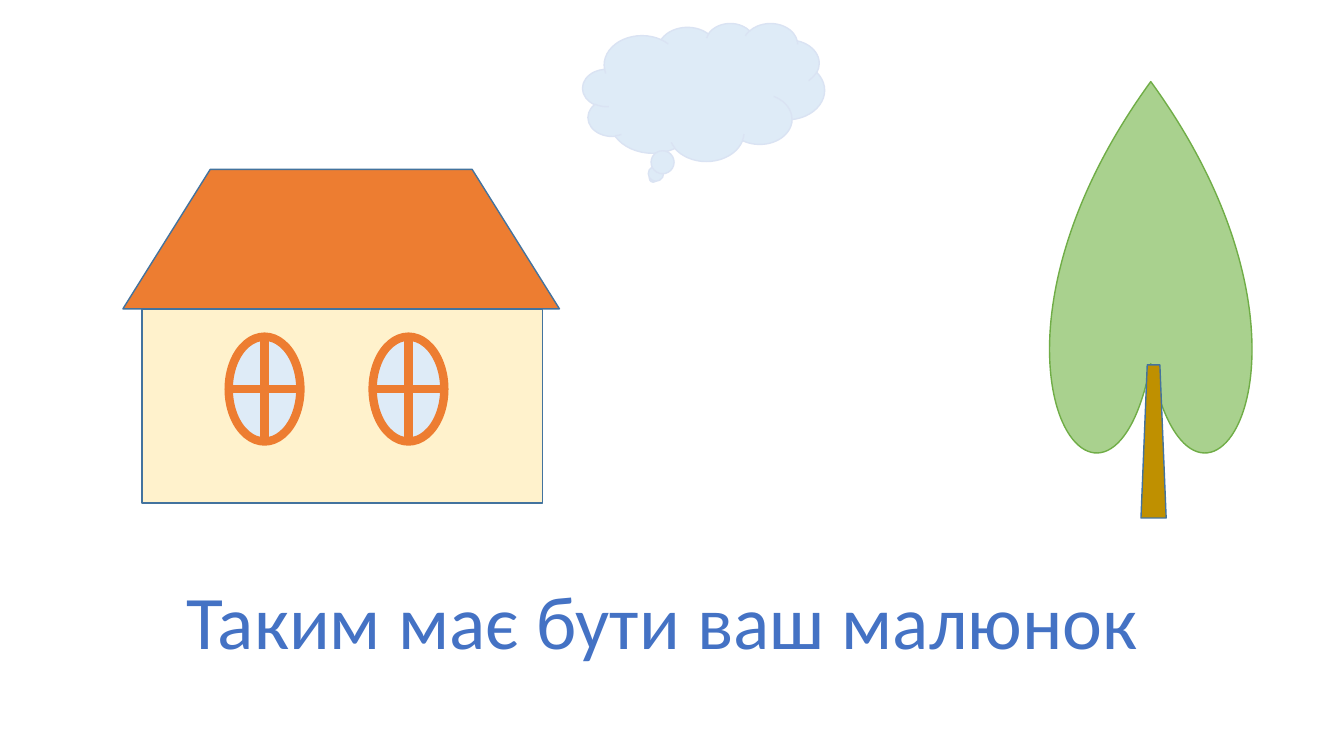
"""Build a slide with a house, a cloud and a tree made of plain shapes."""
from lxml import etree
from pptx import Presentation
from pptx.dml.color import RGBColor
from pptx.enum.shapes import MSO_SHAPE as Form
from pptx.enum.text import MSO_AUTO_SIZE as Fit, PP_ALIGN as Align
from pptx.oxml.ns import qn
from pptx.util import Pt

NAVY = RGBColor(0x20, 0x38, 0x64)
BLUE = RGBColor(0x44, 0x72, 0xC4)
PALE = RGBColor(0x8F, 0xAA, 0xDC)
EDGE = RGBColor(0x43, 0x73, 0x9E)
CREAM = RGBColor(0xFF, 0xF2, 0xCC)
ORANGE = RGBColor(0xED, 0x7D, 0x31)
SKY = RGBColor(0xDE, 0xEB, 0xF7)
MIST = RGBColor(0xDA, 0xE3, 0xF3)
LEAF = RGBColor(0xA9, 0xD1, 0x8E)
GREEN = RGBColor(0x70, 0xAD, 0x47)
BARK = RGBColor(0xBF, 0x90, 0x00)


class Sketch:
    def __init__(self, slide, face="Calibri", edge=EDGE):
        self.slide = slide
        self.face = face
        self.edge = edge

    def shape(self, form, box, fill, edge=None, width=1, turn=0):
        item = self.slide.shapes.add_shape(form, *map(Pt, box))
        item.shadow.inherit = False
        item.rotation = turn
        item.fill.solid()
        item.fill.fore_color.rgb = fill
        item.line.color.rgb = edge or self.edge
        item.line.width = Pt(width)

    def text(self, words, box, size=18, stops=(), align=Align.CENTER):
        frame = self.slide.shapes.add_textbox(*map(Pt, box)).text_frame
        frame.word_wrap = False
        frame.auto_size = Fit.SHAPE_TO_FIT_TEXT
        line = frame.paragraphs[0]
        line.alignment = align
        run = line.add_run()
        run.text = words
        run.font.size = Pt(size)
        run.font.name = self.face
        self.blend(run, stops)

    def blend(self, run, stops):
        grad = etree.Element(qn("a:gradFill"))
        tones = etree.SubElement(grad, qn("a:gsLst"))
        for spot, tone in stops:
            stop = etree.SubElement(tones, qn("a:gs"), pos=str(spot * 1000))
            etree.SubElement(stop, qn("a:srgbClr"), val=str(tone))
        etree.SubElement(grad, qn("a:lin"), ang="5400000", scaled="0")
        run._r.get_or_add_rPr().insert(0, grad)


def main():
    deck = Presentation()
    deck.slide_width, deck.slide_height = Pt(960), Pt(540)
    art = Sketch(deck.slides.add_slide(deck.slide_layouts[6]))

    art.shape(Form.RECTANGLE, (101.5, 221, 286, 138.2), CREAM)
    art.shape(Form.FLOWCHART_MANUAL_OPERATION, (87.8, 121, 311.8, 99.6),
              ORANGE, turn=180)
    for left in (163.4, 266.2):
        art.shape(Form.FLOWCHART_OR, (left, 240.5, 51.2, 74.9), SKY,
                  edge=ORANGE, width=6)
    art.shape(Form.CLOUD_CALLOUT, (416.2, 16.5, 172.8, 98.6), SKY, edge=MIST)
    art.shape(Form.HEART, (750.2, 58.3, 143.6, 268.6), LEAF,
              edge=GREEN, turn=180)
    art.shape(Form.TRAPEZOID, (815, 260.6, 18, 109.4), BARK)
    art.text("Таким має бути ваш малюнок", (122.4, 406.1, 701.3, 72.7),
             size=54, stops=((0, NAVY), (50, BLUE), (100, PALE)))

    deck.save("out.pptx")


if __name__ == "__main__":
    main()
